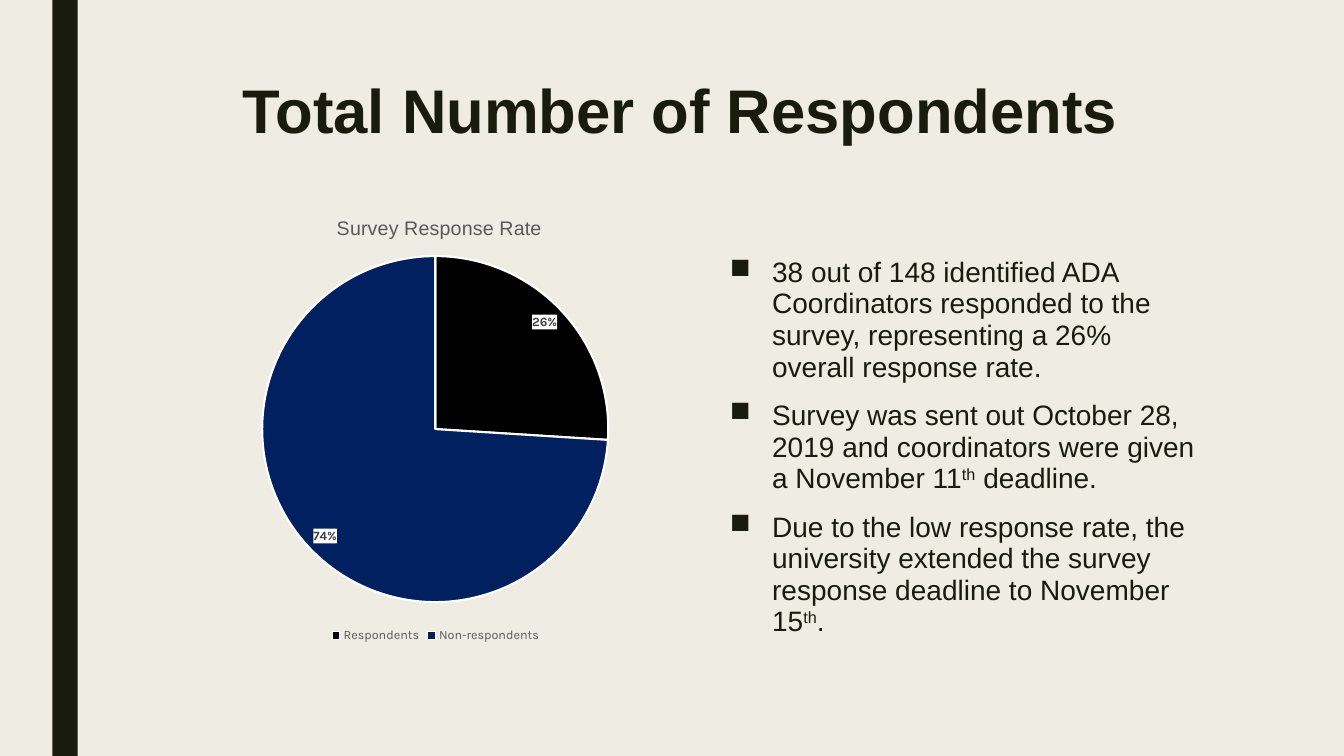
from lxml.etree import SubElement
from pptx import Presentation
from pptx.chart.data import CategoryChartData
from pptx.dml.color import RGBColor
from pptx.enum.chart import XL_CHART_TYPE as ChartType
from pptx.enum.chart import XL_LABEL_POSITION as LabelPosition
from pptx.enum.chart import XL_LEGEND_POSITION as LegendPosition
from pptx.enum.shapes import MSO_SHAPE as Preset
from pptx.enum.text import PP_ALIGN as Align
from pptx.oxml import parse_xml
from pptx.oxml.ns import nsdecls, qn
from pptx.util import Inches, Pt

COLORS = {
    "background": "EFEDE3",
    "ink": "191B0E",
    "respondents": "000000",
    "non_respondents": "002060",
    "slice_border": "FFFFFF",
    "label": "404040",
    "caption": "595959",
}
HEADING = "Total Number of Respondents"
RESPONSE_RATE = {"Respondents": 0.26, "Non-respondents": 0.74}
FINDINGS = [
    ["38 out of 148 identified ADA Coordinators responded to the survey, "
     "representing a 26% overall response rate."],
    ["Survey was sent out October 28, 2019 and coordinators were given "
     "a November 11", "th", " deadline."],
    ["Due to the low response rate, the university extended the survey "
     "response deadline to November 15", "th", "."],
]


def color(key):
    return RGBColor.from_string(COLORS[key])


def style(font, name, size, key, bold=False):
    font.name, font.size, font.bold = name, Pt(size), bold
    font.color.rgb = color(key)


def text_frame(slide, box):
    frame = slide.shapes.add_textbox(*map(Inches, box)).text_frame
    frame.word_wrap = True
    return frame


def add_side_bar(slide, box):
    bar = slide.shapes.add_shape(Preset.RECTANGLE, *map(Inches, box))
    bar.shadow.inherit = False
    bar.fill.solid()
    bar.fill.fore_color.rgb = color("ink")
    bar.line.fill.background()


def add_heading(slide, box):
    heading = text_frame(slide, box).paragraphs[0]
    heading.text = HEADING
    heading.alignment = Align.CENTER
    heading.line_spacing = 0.89
    style(heading.font, "Arial", 44, "ink", bold=True)


def set_layout(element, before, **fractions):
    for old in element.findall(qn("c:layout")):
        element.remove(old)
    layout = parse_xml(f"<c:layout {nsdecls('c')}><c:manualLayout/></c:layout>")
    for tag, value in fractions.items():
        SubElement(layout[0], qn(f"c:{tag}")).set("val", str(value))
    element.find(qn(before)).addprevious(layout)


def add_response_pie(slide, box):
    data = CategoryChartData(number_format="0%")
    data.categories = list(RESPONSE_RATE)
    data.add_series("Series 1", list(RESPONSE_RATE.values()))
    chart = slide.shapes.add_chart(ChartType.PIE, *map(Inches, box), data).chart
    style(chart.font, "Karla", 10, "respondents")

    caption = chart.chart_title.text_frame.paragraphs[0]
    caption.text = "Survey Response Rate"
    style(caption.font, "Arial", 14, "caption")
    chart.chart_title.include_in_layout = False
    set_layout(chart.chart_title._element, "c:overlay",
               xMode="edge", yMode="edge", x=0.32, y=0.04)

    chart.has_legend = True
    chart.legend.position = LegendPosition.BOTTOM
    chart.legend.include_in_layout = False
    style(chart.legend.font, "Karla", 9, "caption")

    pie = chart.plots[0]
    pie.vary_by_categories = True
    set_layout(pie._element.getparent(), "c:pieChart", layoutTarget="inner",
               xMode="edge", yMode="edge", x=0.195, y=0.138, w=0.609, h=0.763)
    for index, key in enumerate(("respondents", "non_respondents")):
        piece = pie.series[0].points[index].format
        piece.fill.solid()
        piece.fill.fore_color.rgb = color(key)
        piece.line.color.rgb = color("slice_border")
        piece.line.width = Pt(1.5)

    labels = pie.series[0].data_labels
    labels.show_value = True
    labels.show_percentage = False
    labels.number_format = "0%"
    labels.number_format_is_linked = False
    labels.position = LabelPosition.INSIDE_END
    style(labels.font, "Karla", 9, "label", bold=True)
    labels._element.find(qn("c:txPr")).addprevious(parse_xml(
        f"<c:spPr {nsdecls('c', 'a')}><a:solidFill>"
        f"<a:srgbClr val='{COLORS['slice_border']}'/></a:solidFill></c:spPr>"))


def add_findings(slide, box):
    frame = text_frame(slide, box)
    for index, pieces in enumerate(FINDINGS):
        finding = frame.add_paragraph() if index else frame.paragraphs[0]
        for piece in pieces:
            run = finding.add_run()
            run.text = piece
            if piece == "th":
                run.font._element.set("baseline", "30000")
        finding.line_spacing = 0.94
        finding.space_before, finding.space_after = Pt(10), Pt(2)
        style(finding.font, "Arial", 20, "ink")
        properties = finding._p.get_or_add_pPr()
        properties.set("marL", str(Inches(0.42)))
        properties.set("indent", str(-Inches(0.42)))
        bullet = parse_xml(f"<a:buChar {nsdecls('a')} char='■'/>")
        properties.find(qn("a:defRPr")).addprevious(bullet)


def build_respondents_slide(deck):
    slide = deck.slides.add_slide(deck.slide_layouts[6])
    slide.background.fill.solid()
    slide.background.fill.fore_color.rgb = color("background")
    add_side_bar(slide, (0.52, 0, 0.25, 7.5))
    add_heading(slide, (1.5, 0.75, 10.5, 1.62))
    add_response_pie(slide, (1.5, 1.92, 5.64, 4.5))
    add_findings(slide, (7.14, 2.5, 4.86, 3.92))


def main():
    deck = Presentation()
    deck.slide_width, deck.slide_height = Inches(13.33), Inches(7.5)
    build_respondents_slide(deck)
    deck.save("out.pptx")


if __name__ == "__main__":
    main()
